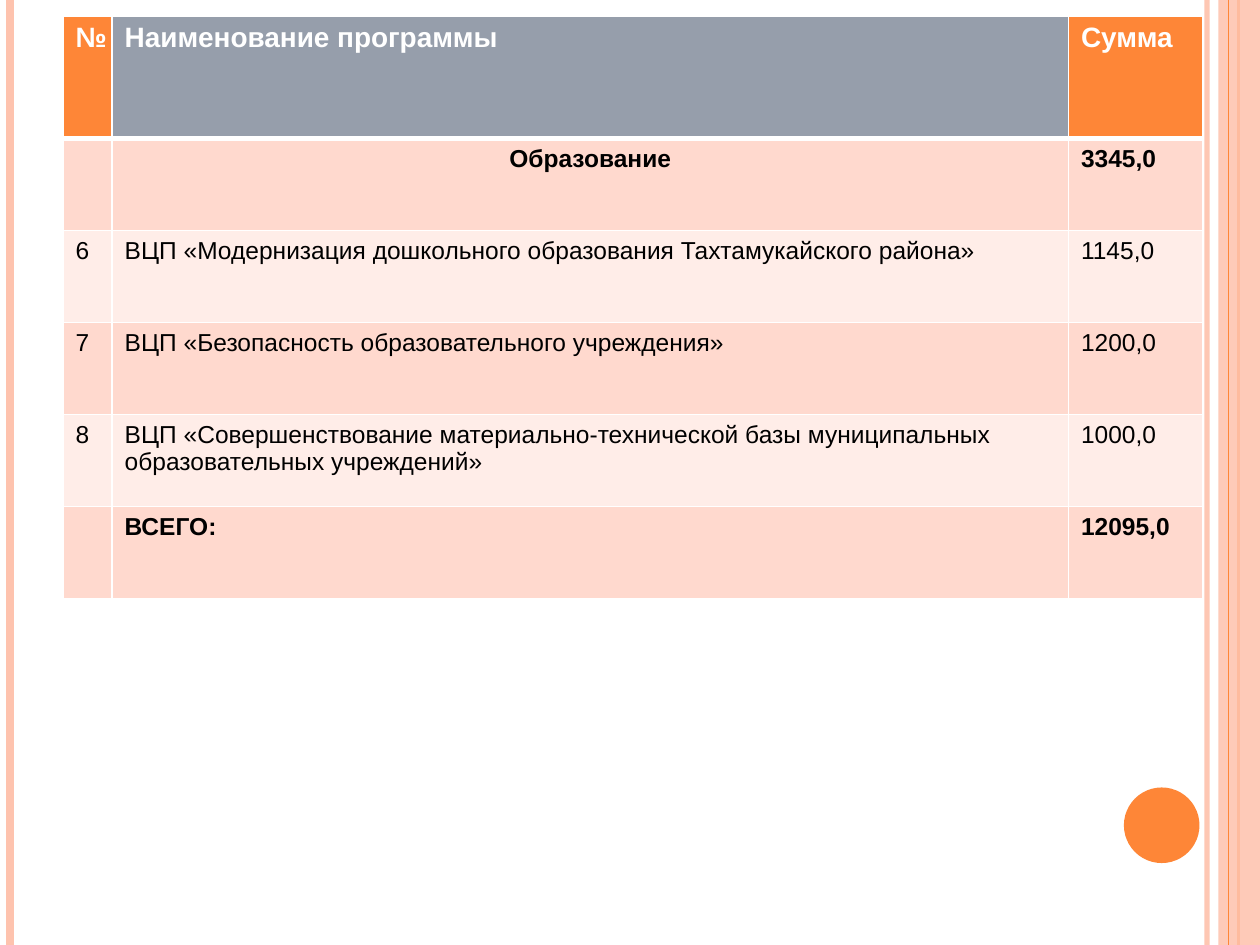
from pptx import Presentation
from pptx.dml.color import RGBColor
from pptx.enum.shapes import MSO_CONNECTOR, MSO_SHAPE
from pptx.enum.text import PP_ALIGN
from pptx.oxml.ns import qn
from pptx.util import Inches, Pt
from lxml.etree import SubElement

THEME = {
    "font": "Arial", "head_size": 16, "body_size": 14,
    "white": "FFFFFF", "black": "000000",
    "orange": "FE8637", "peach": "FEC3AE", "gray": "969EAB",
    "bands": ("FFD9CE", "FFEDE8"),
}

HEADER = ("№", "Наименование программы", "Сумма")
HEADER_FILLS = ("orange", "gray", "orange")
# (number, programme, sum, bold)
PROGRAMS = [
    ("", "Образование", "3345,0", True),
    ("6", "ВЦП «Модернизация дошкольного образования Тахтамукайского района»", "1145,0", False),
    ("7", "ВЦП «Безопасность образовательного учреждения»", "1200,0", False),
    ("8", "ВЦП «Совершенствование материально-технической базы муниципальных "
          "образовательных учреждений»", "1000,0", False),
    ("", "ВСЕГО:", "12095,0", True),
]
SECTION = "Образование"
COL_WIDTHS = (0.39, 7.59, 1.07)
HEAD_HEIGHT, ROW_HEIGHT = 0.97, 0.73
SLIDE_W, SLIDE_H = 10, 7.5


def rgb(value):
    return RGBColor.from_string(value)


def set_alpha(fill_parent, percent):
    color = fill_parent.find(qn("a:solidFill"))[0]
    SubElement(color, qn("a:alpha")).set("val", str(percent * 1000))


def add_stripe(s, x, color, width, alpha=None):
    line = s.shapes.add_connector(
        MSO_CONNECTOR.STRAIGHT, Inches(x), 0, Inches(x), Inches(SLIDE_H))
    line.line.color.rgb = rgb(THEME[color])
    line.line.width = Pt(width)
    spPr = line._element.spPr
    SubElement(spPr, qn("a:effectLst"))
    if alpha:
        set_alpha(spPr.find(qn("a:ln")), alpha)


def add_plain_shape(s, kind, box, color, alpha=None):
    sp = s.shapes.add_shape(kind, *(Inches(v) for v in box))
    sp.shadow.inherit = False
    sp.fill.solid()
    sp.fill.fore_color.rgb = rgb(THEME[color])
    sp.line.fill.background()
    if alpha:
        set_alpha(sp._element.spPr, alpha)


def set_borders(cell, bottom=1, top=1):
    tcPr = cell._tc.get_or_add_tcPr()
    for side, width in (("L", 1), ("R", 1), ("T", top), ("B", bottom)):
        ln = SubElement(tcPr, qn(f"a:ln{side}"), w=str(Pt(width)))
        fill = SubElement(ln, qn("a:solidFill"))
        SubElement(fill, qn("a:srgbClr"), val=THEME["white"])


def fill_cell(cell, text, fill, color, size, bold, align=None):
    cell.fill.solid()
    cell.fill.fore_color.rgb = rgb(fill)
    if not text:
        return
    p = cell.text_frame.paragraphs[0]
    if align is not None:
        p.alignment = align
    r = p.add_run()
    r.text = text
    r.font.name = THEME["font"]
    r.font.size = Pt(size)
    r.font.bold = bold
    r.font.color.rgb = rgb(THEME[color])


def add_program_table(s):
    heights = [HEAD_HEIGHT] + [ROW_HEIGHT] * len(PROGRAMS)
    table = s.shapes.add_table(
        len(heights), len(COL_WIDTHS), Inches(0.5), Inches(0.13),
        Inches(sum(COL_WIDTHS)), Inches(sum(heights))).table
    for column, width in zip(table.columns, COL_WIDTHS):
        column.width = Inches(width)
    for row, height in zip(table.rows, heights):
        row.height = Inches(height)

    # Header row
    for c, (text, fill) in enumerate(zip(HEADER, HEADER_FILLS)):
        cell = table.cell(0, c)
        set_borders(cell, bottom=3)
        fill_cell(cell, text, THEME[fill], "white", THEME["head_size"], True)

    # Programme rows in alternating bands
    for i, (*texts, bold) in enumerate(PROGRAMS):
        for c, text in enumerate(texts):
            cell = table.cell(i + 1, c)
            set_borders(cell, top=3 if i == 0 else 1)
            align = PP_ALIGN.CENTER if text == SECTION else None
            fill_cell(cell, text, THEME["bands"][i % 2], "black",
                      THEME["body_size"], bold, align)


def main():
    prs = Presentation()
    prs.slide_width, prs.slide_height = Inches(SLIDE_W), Inches(SLIDE_H)
    s = prs.slides.add_slide(prs.slide_layouts[6])
    s.background.fill.solid()
    s.background.fill.fore_color.rgb = rgb(THEME["white"])

    # Edge decoration
    add_stripe(s, 9.58, "peach", 3, alpha=93)
    add_stripe(s, 0.08, "peach", 4.5)
    add_stripe(s, 9.83, "orange", 1.5)
    add_plain_shape(s, MSO_SHAPE.RECTANGLE, (9.67, 0, 0.33, SLIDE_H), "peach", alpha=87)
    add_stripe(s, 9.75, "orange", 0.75)
    add_plain_shape(s, MSO_SHAPE.OVAL, (8.92, 6.25, 0.6, 0.6), "orange")

    add_program_table(s)
    prs.save("out.pptx")


if __name__ == "__main__":
    main()
